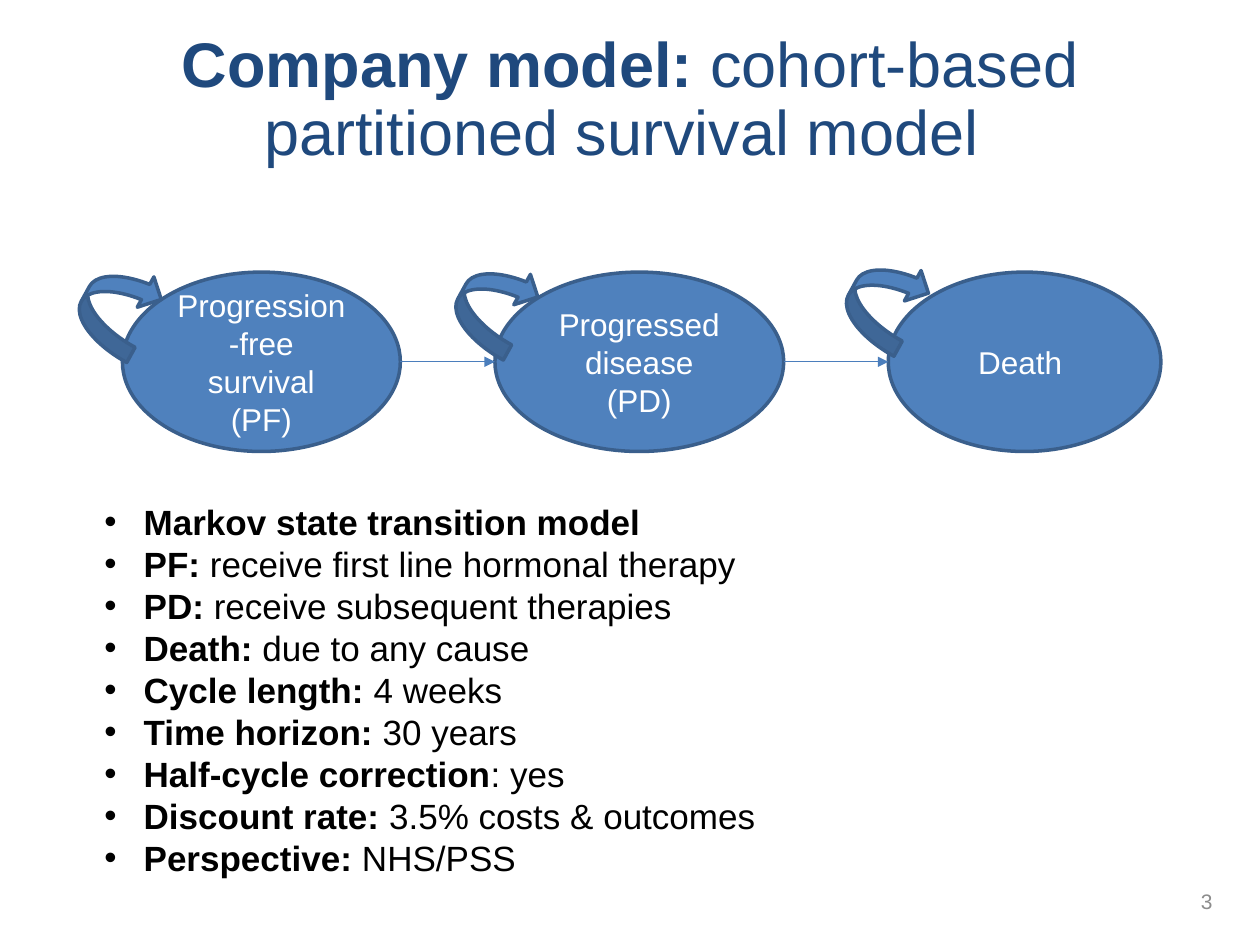
from lxml import etree
from pptx import Presentation
from pptx.dml.color import RGBColor
from pptx.enum.shapes import MSO_CONNECTOR, MSO_SHAPE
from pptx.enum.text import MSO_ANCHOR, PP_ALIGN
from pptx.oxml.ns import qn
from pptx.util import Pt

NAVY = RGBColor(0x1F, 0x49, 0x7D)
BLUE = RGBColor(0x4F, 0x81, 0xBD)
OUTLINE = RGBColor(0x3A, 0x5F, 0x8C)
ARROW_BLUE = RGBColor(0x4B, 0x7E, 0xBC)
GREY = RGBColor(0x8C, 0x8C, 0x8C)
WHITE = RGBColor(0xFF, 0xFF, 0xFF)
BLACK = RGBColor(0, 0, 0)
MIDDLE = MSO_ANCHOR.MIDDLE
CENTER, RIGHT = PP_ALIGN.CENTER, PP_ALIGN.RIGHT
ELLIPSE, LOOP = MSO_SHAPE.OVAL, MSO_SHAPE.CURVED_DOWN_ARROW
STRAIGHT = MSO_CONNECTOR.STRAIGHT


def add_span(para, text, color, **formats):
    span = para.add_run()
    span.text = text
    span.font.color.rgb = color
    for name, value in {"name": "Arial", **formats}.items():
        setattr(span.font, name, value)


def add_blue_shape(kind, left, top, width, height):
    shape = slide.shapes.add_shape(kind, Pt(left), Pt(top), Pt(width), Pt(height))
    shape.shadow.inherit = False
    shape.fill.solid()
    shape.fill.fore_color.rgb = BLUE
    shape.line.color.rgb = OUTLINE
    shape.line.width = Pt(2)
    return shape


deck = Presentation()
deck.slide_width, deck.slide_height = Pt(720), Pt(540)
slide = deck.slides.add_slide(deck.slide_layouts[5])

# Title
title = slide.shapes.title
title_format = {"left": Pt(20), "top": Pt(21), "width": Pt(680), "height": Pt(74)}
for name, value in title_format.items():
    setattr(title, name, value)
title.text_frame.vertical_anchor = MIDDLE
title.text_frame.word_wrap = True
para = title.text_frame.paragraphs[0]
para.alignment = CENTER
para.line_spacing = 0.9
add_span(para, "Company model: ", NAVY, size=Pt(36), bold=True)
add_span(para, "cohort-based partitioned survival model ", NAVY, size=Pt(36), bold=False)

# Health states
STATE_TOP, STATE_HEIGHT = 155.5, 102.5
states = [
    ("Progression-free survival (PF)", 70, 158.8),
    ("Progressed disease (PD)", 282.8, 165),
    ("Death ", 507.6, 155.8),
]
for text, left, width in states:
    state = add_blue_shape(ELLIPSE, left, STATE_TOP, width, STATE_HEIGHT)
    state.text_frame.word_wrap = True
    state.text_frame.vertical_anchor = MIDDLE
    para = state.text_frame.paragraphs[0]
    para.alignment = CENTER
    add_span(para, text, WHITE, size=Pt(18))

# Transitions between neighbouring states
middle = Pt(STATE_TOP + STATE_HEIGHT / 2)
for (_, left, width), (_, next_left, _) in zip(states, states[1:]):
    arrow = slide.shapes.add_connector(
        STRAIGHT, Pt(left + width), middle, Pt(next_left), middle)
    arrow.line.color.rgb = ARROW_BLUE
    arrow.line.width = Pt(0.75)
    etree.SubElement(arrow.line._get_or_add_ln(), qn("a:tailEnd"), type="triangle")
    etree.SubElement(arrow._element.spPr, qn("a:effectLst"))

# Loops for staying in a state
for left, top in [(41.8, 155.5), (257, 154.1), (480.2, 151.9)]:
    loop = add_blue_shape(LOOP, left, top, 51, 39.6)
    loop.rotation = 298.7

# Model features
features = [
    ("Markov state transition model", ""),
    ("PF: ", "receive first line hormonal therapy"),
    ("PD: ", "receive subsequent therapies"),
    ("Death:", " due to any cause"),
    ("Cycle length: ", "4 weeks"),
    ("Time horizon: ", "30 years"),
    ("Half-cycle correction", ": yes"),
    ("Discount rate: ", "3.5% costs & outcomes"),
    ("Perspective: ", "NHS/PSS"),
]
box = slide.shapes.add_textbox(Pt(52.5), Pt(282.2), Pt(610.5), Pt(247))
box.text_frame.word_wrap = True
indent = Pt(22.5)
for index, (label, detail) in enumerate(features):
    para = box.text_frame.add_paragraph() if index else box.text_frame.paragraphs[0]
    properties = para._p.get_or_add_pPr()
    properties.set("marL", str(int(indent)))
    properties.set("indent", str(-int(indent)))
    etree.SubElement(properties, qn("a:buFont"), typeface="Arial")
    etree.SubElement(properties, qn("a:buChar"), char="•")
    add_span(para, label, BLACK, size=Pt(20), bold=True)
    if detail:
        add_span(para, detail, BLACK, size=Pt(20), bold=False)

# Page number
number = slide.shapes.add_textbox(Pt(538), Pt(500.5), Pt(162), Pt(28.8))
number.text_frame.word_wrap = True
number.text_frame.vertical_anchor = MIDDLE
para = number.text_frame.paragraphs[0]
para.alignment = RIGHT
add_span(para, "3", GREY, size=Pt(12))

deck.save("out.pptx")
